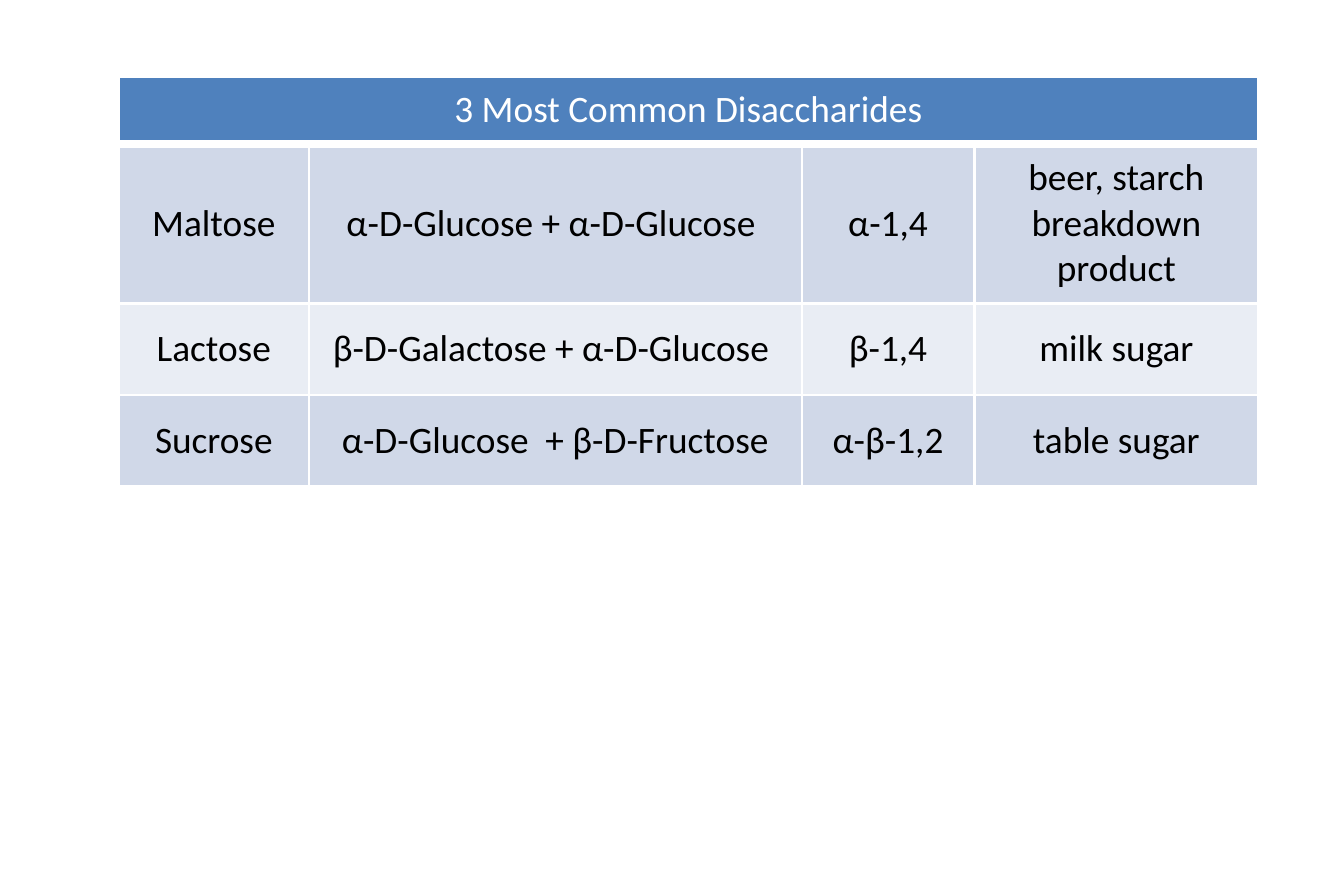
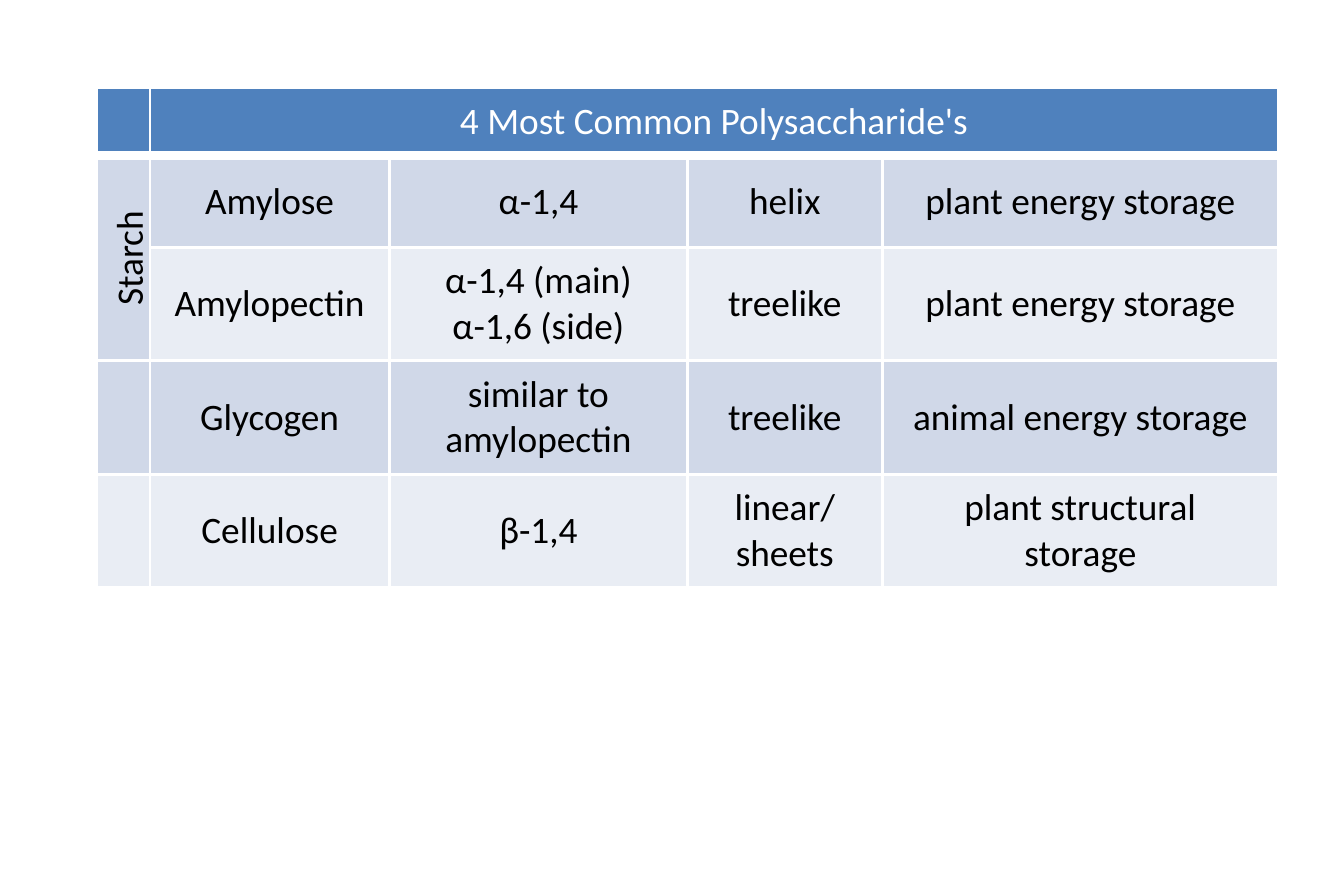
import pptx
import pptx.dml.color
import pptx.enum.text
import pptx.oxml
import pptx.oxml.ns
import pptx.util

Inches = pptx.util.Inches
RGBColor = pptx.dml.color.RGBColor

# Shared style
HEADER_BLUE = RGBColor(0x4F, 0x81, 0xBD)
BANDS = (RGBColor(0xD0, 0xD8, 0xE8), RGBColor(0xE9, 0xED, 0xF4))
WHITE = RGBColor(0xFF, 0xFF, 0xFF)
BLACK = RGBColor(0, 0, 0)
FONT = "Calibri"
TEXT_SIZE = pptx.util.Pt(12)
RULE, HEADER_RULE = pptx.util.Pt(1), pptx.util.Pt(3)

# Row heights by the number of text lines they hold
HEADER, ONE_LINE, TWO_LINES, THREE_LINES = 0.29, 0.41, 0.5, 0.7

DISACCHARIDES = [
    ["3 Most Common Disaccharides", "", "", ""],
    ["Maltose", "α-D-Glucose + α-D-Glucose ", "α-1,4",
     "beer, starch breakdown product"],
    ["Lactose", "β-D-Galactose + α-D-Glucose ", "β-1,4", "milk sugar"],
    ["Sucrose", "α-D-Glucose  + β-D-Fructose", "α-β-1,2", "table sugar"],
]
POLYSACCHARIDES = [
    ["", "4 Most Common Polysaccharide's", "", "", ""],
    ["Starch", "Amylose", "α-1,4", "helix", "plant energy storage"],
    ["", "Amylopectin", "α-1,4 (main)\nα-1,6 (side)", "treelike",
     "plant energy storage"],
    ["", "Glycogen", "similar to amylopectin", "treelike",
     "animal energy storage"],
    ["", "Cellulose", "β-1,4", "linear/\nsheets", "plant structural storage"],
]


def set_borders(cell, bottom):
    """Draw white rules on all four sides, ahead of the cell's fill."""
    properties = cell._tc.get_or_add_tcPr()
    for index, side in enumerate(("lnL", "lnR", "lnT", "lnB")):
        width = bottom if side == "lnB" else RULE
        properties.insert(index, pptx.oxml.parse_xml(
            f'<a:{side} {pptx.oxml.ns.nsdecls("a")} w="{int(width)}">'
            f'<a:solidFill><a:srgbClr val="{WHITE}"/></a:solidFill></a:{side}>'))


def write_cell(cell, text, color):
    lines = text.split("\n")
    frame = cell.text_frame
    for index, line in enumerate(lines):
        paragraph = frame.add_paragraph() if index else frame.paragraphs[0]
        paragraph.alignment = pptx.enum.text.PP_ALIGN.CENTER
        if not line:
            # Keeps an empty cell from stretching its row
            paragraph._p.get_or_add_endParaRPr().set(
                "sz", str(int(TEXT_SIZE.pt * 100)))
            continue
        run = paragraph.add_run()
        run.text = line
        run.font.name, run.font.size = FONT, TEXT_SIZE
        run.font.bold = False
        run.font.color.rgb = color


def add_sugar_table(slide, left, top, widths, heights, rows, title_column=0):
    """Place a banded table whose title spans from title_column to the end."""
    table = slide.shapes.add_table(
        len(rows), len(widths), Inches(left), Inches(top),
        Inches(sum(widths)), Inches(sum(heights))).table
    for column, width in zip(table.columns, widths):
        column.width = Inches(width)
    for row, height in zip(table.rows, heights):
        row.height = Inches(height)

    for r, texts in enumerate(rows):
        is_header = r == 0
        for c, text in enumerate(texts):
            cell = table.cell(r, c)
            write_cell(cell, text, WHITE if is_header else BLACK)
            cell.fill.solid()
            cell.fill.fore_color.rgb = (
                HEADER_BLUE if is_header else BANDS[(r - 1) % 2])
            set_borders(cell, HEADER_RULE if is_header else RULE)
            if not is_header:
                cell.vertical_anchor = pptx.enum.text.MSO_ANCHOR.MIDDLE
    table.cell(0, title_column).merge(table.cell(0, len(widths) - 1))
    return table


def build_disaccharides(slide):
    add_sugar_table(slide, 0.53, 0.34, [0.85, 2.2, 0.77, 1.27],
                    [HEADER, THREE_LINES, ONE_LINE, ONE_LINE], DISACCHARIDES)


def build_polysaccharides(slide):
    table = add_sugar_table(
        slide, 0.43, 0.39, [0.23, 1.07, 1.33, 0.87, 1.77],
        [HEADER, ONE_LINE, TWO_LINES, TWO_LINES, TWO_LINES],
        POLYSACCHARIDES, title_column=1)
    # Starch groups amylose and amylopectin, reading upwards
    starch = table.cell(1, 0)
    starch.merge(table.cell(2, 0))
    starch._tc.get_or_add_tcPr().set("vert", "vert270")


def main():
    deck = pptx.Presentation()
    deck.slide_width, deck.slide_height = Inches(6), Inches(4)
    blank = deck.slide_layouts[6]
    for build in (build_disaccharides, build_polysaccharides):
        build(deck.slides.add_slide(blank))
    deck.save("out.pptx")


if __name__ == "__main__":
    main()
